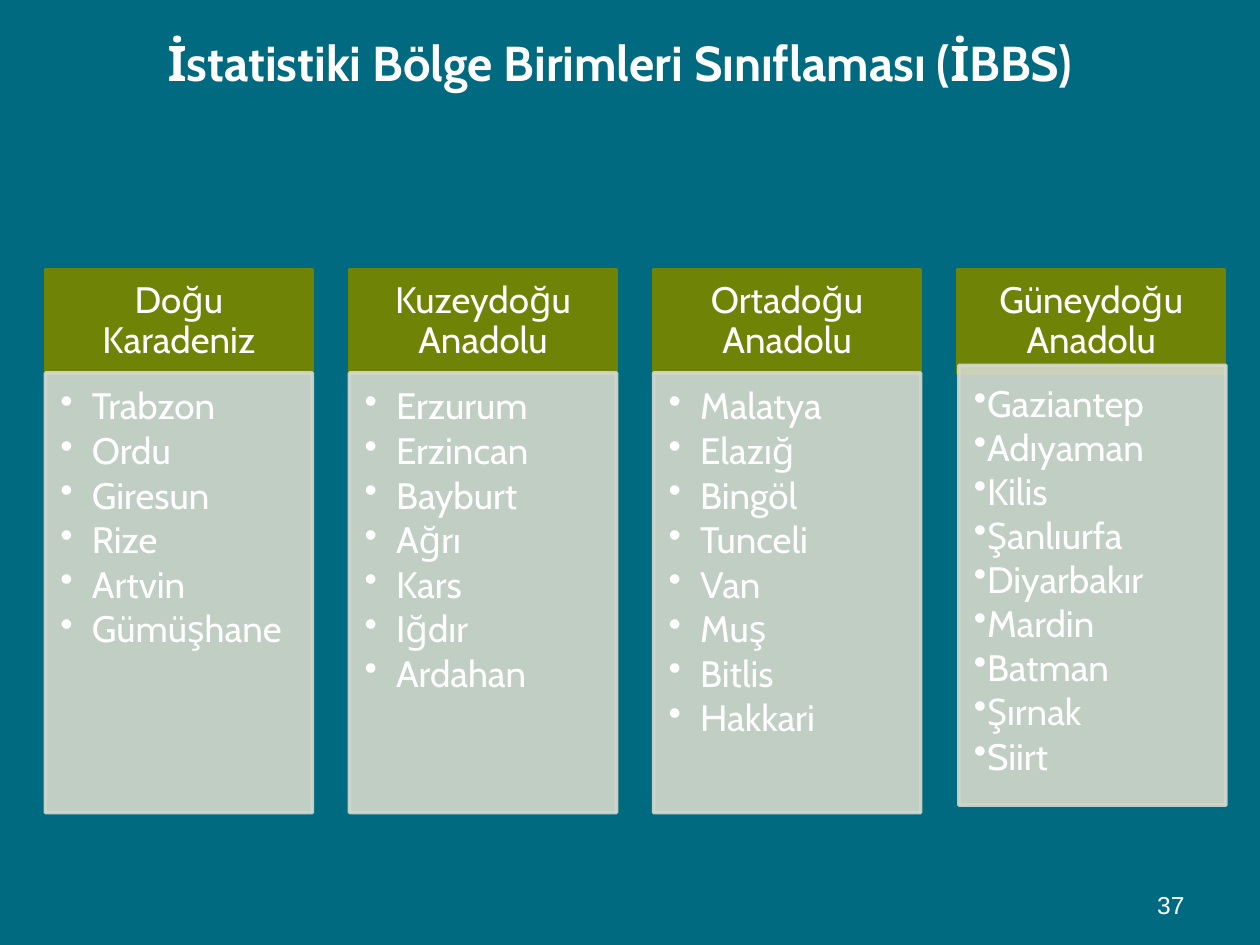
import pptx
import pptx.dml.color
import pptx.enum.shapes
import pptx.enum.text
import pptx.oxml
import pptx.oxml.ns
import pptx.util
from pptx.util import Inches

COLORS = {"background": "006B80", "header": "6F8406", "panel": "D5D9CC", "text": "FFFFFF"}
ALIGN = pptx.enum.text.PP_ALIGN
ANCHOR = pptx.enum.text.MSO_ANCHOR
COLUMN_WIDTH = 2.12
FIRST_LEFT, LAST_LEFT = 0.36, 7.6
REGIONS = [
    ("Doğu Karadeniz", ["Trabzon", "Ordu", "Giresun", "Rize", "Artvin", "Gümüşhane"]),
    ("Kuzeydoğu Anadolu", ["Erzurum", "Erzincan", "Bayburt", "Ağrı", "Kars", "Iğdır", "Ardahan"]),
    ("Ortadoğu Anadolu", ["Malatya", "Elazığ", "Bingöl", "Tunceli", "Van", "Muş", "Bitlis", "Hakkari"]),
    ("Güneydoğu Anadolu", ["Gaziantep", "Adıyaman", "Kilis", "Şanlıurfa", "Diyarbakır",
                           "Mardin", "Batman", "Şırnak", "Siirt"]),
]


def rgb(name):
    return pptx.dml.color.RGBColor.from_string(COLORS[name])


def add_run(paragraph, text, size, face="Cabin", bold=False):
    run = paragraph.add_run()
    run.text = text
    run.font.size = pptx.util.Pt(size)
    run.font.name = face
    run.font.bold = bold
    run.font.color.rgb = rgb("text")


def set_frame(frame, anchor, insets):
    frame.word_wrap = True
    frame.auto_size = pptx.enum.text.MSO_AUTO_SIZE.NONE
    frame.vertical_anchor = anchor
    (frame.margin_left, frame.margin_top,
     frame.margin_right, frame.margin_bottom) = map(Inches, insets)


def add_block(slide, left, top, height, color, opacity=100):
    block = slide.shapes.add_shape(
        pptx.enum.shapes.MSO_SHAPE.RECTANGLE,
        Inches(left), Inches(top), Inches(COLUMN_WIDTH), Inches(height))
    block.shadow.inherit = False
    block.line.width = pptx.util.Pt(2)
    for fill in (block.fill, block.line.fill):
        fill.solid()
        fill.fore_color.rgb = rgb(color)
    if opacity < 100:
        for swatch in block._element.spPr.iter(pptx.oxml.ns.qn("a:srgbClr")):
            alpha = swatch.makeelement(pptx.oxml.ns.qn("a:alpha"), {"val": str(opacity * 1000)})
            swatch.append(alpha)
    return block.text_frame


def add_header(slide, left, region):
    frame = add_block(slide, left, 2.14, 0.82, "header")
    set_frame(frame, ANCHOR.MIDDLE, (0.16, 0.09, 0.16, 0.09))
    paragraph = frame.paragraphs[0]
    paragraph.alignment = ALIGN.CENTER
    paragraph.line_spacing = 0.9
    add_run(paragraph, region, 21)


def set_bullet(paragraph, indent):
    properties = paragraph._p.get_or_add_pPr()
    properties.set("marL", str(Inches(indent)))
    properties.set("indent", str(-Inches(indent)))
    bullet = properties.makeelement(pptx.oxml.ns.qn("a:buChar"), {"char": "•"})
    properties.append(bullet)


def add_provinces(slide, left, top, provinces, indent, line_spacing, space_after):
    frame = add_block(slide, left, top, 3.49, "panel", 90)
    set_frame(frame, ANCHOR.TOP, (0.12, 0.12, 0.16, 0.18))
    for index, province in enumerate(provinces):
        paragraph = frame.add_paragraph() if index else frame.paragraphs[0]
        set_bullet(paragraph, indent)
        paragraph.alignment = ALIGN.LEFT
        paragraph.line_spacing = line_spacing
        paragraph.space_after = pptx.util.Pt(space_after)
        add_run(paragraph, province, 21)


def set_title(slide, text):
    title = slide.shapes.title
    title.left, title.top, title.width, title.height = map(Inches, (1.14, 0, 7.56, 0.99))
    set_frame(title.text_frame, ANCHOR.MIDDLE, (0.1, 0.05, 0.1, 0.05))
    paragraph = title.text_frame.paragraphs[0]
    paragraph.alignment = ALIGN.CENTER
    add_run(paragraph, text, 28, bold=True)


def add_page_number(slide, number):
    box = slide.shapes.add_textbox(*map(Inches, (7.17, 6.83, 2.33, 0.52)))
    set_frame(box.text_frame, ANCHOR.BOTTOM, (0.1, 0.05, 0.1, 0.05))
    paragraph = box.text_frame.paragraphs[0]
    paragraph.alignment = ALIGN.RIGHT
    add_run(paragraph, number, 14, "Arial")


def main():
    presentation = pptx.Presentation()
    presentation.slide_width, presentation.slide_height = Inches(10), Inches(7.5)
    slide = presentation.slides.add_slide(presentation.slide_layouts[5])
    slide.background.fill.solid()
    slide.background.fill.fore_color.rgb = rgb("background")
    set_title(slide, "İstatistiki Bölge Birimleri Sınıflaması (İBBS)")
    add_page_number(slide, "37")
    last = len(REGIONS) - 1
    pitch = (LAST_LEFT - FIRST_LEFT) / last
    for index, (region, provinces) in enumerate(REGIONS):
        left = FIRST_LEFT + index * pitch
        add_header(slide, left, region)
        if index < last:
            add_provinces(slide, left, 2.96, provinces, 0.25, 0.9, 2.8)
        else:
            add_provinces(slide, left + 0.01, 2.9, provinces, 0, 1.0, 0)
    presentation.save("out.pptx")


if __name__ == "__main__":
    main()
